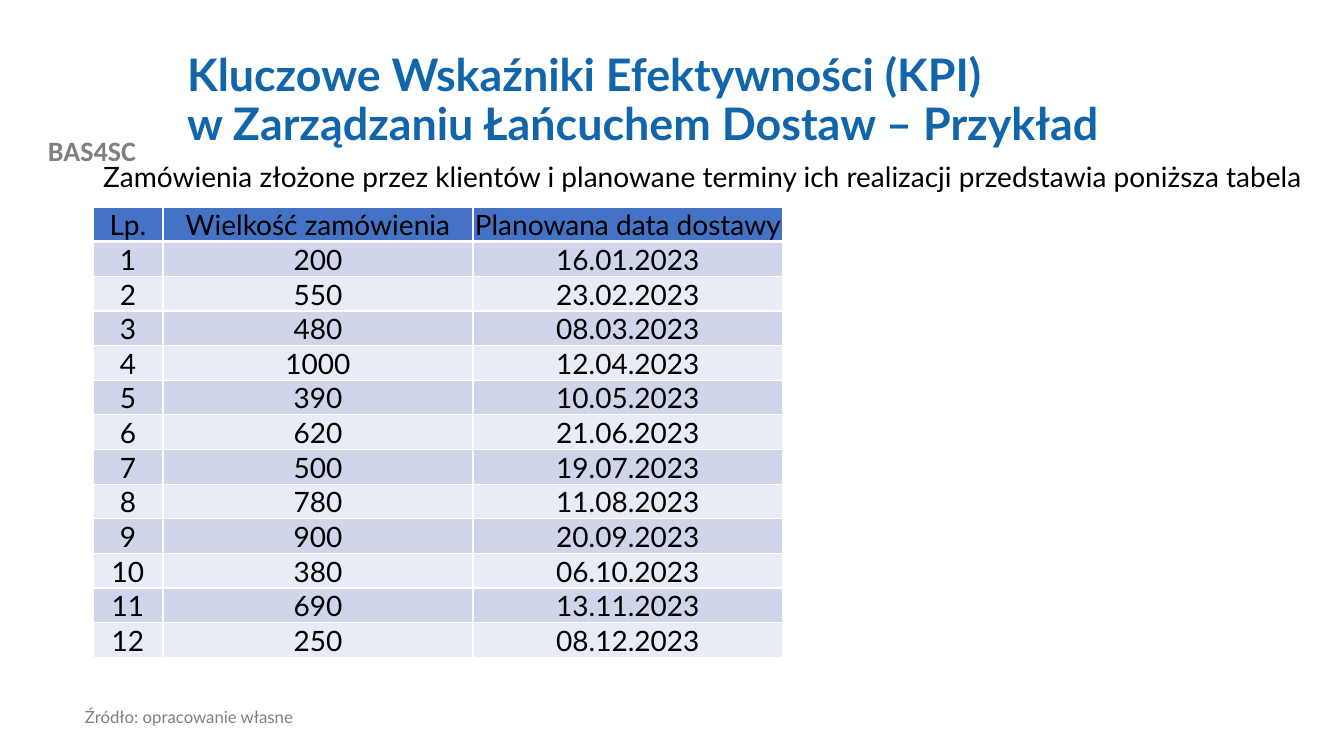
import pptx
import pptx.dml.color
import pptx.enum.text
import pptx.oxml
import pptx.oxml.ns
import pptx.util

PX = 914400 / 100.8
ALIGN = pptx.enum.text.PP_ALIGN
ANCHOR = pptx.enum.text.MSO_ANCHOR

HEADERS = ["Lp.", "Wielkość zamówienia", "Planowana data dostawy"]
ORDERS = [
    (200, "16.01.2023"),
    (550, "23.02.2023"),
    (480, "08.03.2023"),
    (1000, "12.04.2023"),
    (390, "10.05.2023"),
    (620, "21.06.2023"),
    (500, "19.07.2023"),
    (780, "11.08.2023"),
    (900, "20.09.2023"),
    (380, "06.10.2023"),
    (690, "13.11.2023"),
    (250, "08.12.2023"),
]
COLUMN_WIDTHS = [70, 310, 310]
ROW_HEIGHT = 34


def px(n):
    return pptx.util.Emu(round(n * PX))


def rgb(value):
    return pptx.dml.color.RGBColor.from_string(value)


def write(tf, text, size=20, color="000000", font="Lato", bold=False,
          align=ALIGN.LEFT, spacing=1.0, anchor=ANCHOR.TOP):
    tf.word_wrap = True
    tf.vertical_anchor = anchor
    p = tf.paragraphs[0]
    p.text = text
    p.alignment = align
    p.line_spacing = spacing
    p.space_before = pptx.util.Pt(0)
    for r in p.runs:
        r.font.size = pptx.util.Pt(size)
        r.font.name = font
        r.font.bold = bold
        r.font.color.rgb = rgb(color)


def place(sp, x, y, w, h):
    sp.left, sp.top, sp.width, sp.height = px(x), px(y), px(w), px(h)


def fill_placeholder(sp, box, text, **fmt):
    place(sp, *box)
    sp.text_frame.auto_size = pptx.enum.text.MSO_AUTO_SIZE.NONE
    write(sp.text_frame, text, **fmt)


def add_label(slide, box, text, **fmt):
    sp = slide.shapes.add_textbox(*map(px, box))
    write(sp.text_frame, text, **fmt)


def remove_bullet(p):
    pPr = p._p.get_or_add_pPr()
    pPr.set("marL", "0")
    pPr.set("indent", "0")
    pPr.append(pptx.oxml.parse_xml(
        f"<a:buNone {pptx.oxml.ns.nsdecls('a')}/>"))


def set_borders(cell, **widths):
    """Draw white cell borders; widths are in points, keyed by side L, R, T, B."""
    tcPr = cell._tc.get_or_add_tcPr()
    for side, width in widths.items():
        tcPr.append(pptx.oxml.parse_xml(
            f'<a:ln{side} {pptx.oxml.ns.nsdecls("a")} w="{pptx.util.Pt(width)}">'
            '<a:solidFill><a:srgbClr val="FFFFFF"/></a:solidFill>'
            f'</a:ln{side}>'))


def row_color(row):
    if row == 0:
        return "4472C4"
    return "CFD5EA" if row % 2 else "E9EBF5"


def add_orders_table(slide, x, y):
    rows = [HEADERS] + [(n, *order) for n, order in enumerate(ORDERS, 1)]
    frame = slide.shapes.add_table(
        len(rows), len(HEADERS), px(x), px(y),
        px(sum(COLUMN_WIDTHS)), px(ROW_HEIGHT * len(rows)))
    table = frame.table
    for column, width in zip(table.columns, COLUMN_WIDTHS):
        column.width = px(width)
    for i, values in enumerate(rows):
        table.rows[i].height = px(ROW_HEIGHT)
        for j, value in enumerate(values):
            cell = table.cell(i, j)
            cell.margin_left = cell.margin_top = cell.margin_right = px(1)
            cell.margin_bottom = 0
            set_borders(cell, L=1, R=1, T=3 if i == 1 else 1, B=3 if i == 0 else 1)
            cell.fill.solid()
            cell.fill.fore_color.rgb = rgb(row_color(i))
            write(cell.text_frame, str(value), align=ALIGN.CENTER)
            cell.vertical_anchor = ANCHOR.MIDDLE


def main():
    prs = pptx.Presentation()
    prs.slide_width, prs.slide_height = px(1344), px(756)
    slide = prs.slides.add_slide(prs.slide_layouts[1])
    title, body = slide.placeholders

    add_label(slide, (0, 129, 184, 44), "BAS4SC", color="808080",
              font="Calibri", bold=True, align=ALIGN.CENTER)
    fill_placeholder(
        title, (177, 40, 1075, 123),
        "Kluczowe Wskaźniki Efektywności (KPI)\v"
        "w Zarządzaniu Łańcuchem Dostaw – Przykład",
        size=32, color="1065AB", bold=True, spacing=0.9, anchor=ANCHOR.MIDDLE)
    remove_bullet(body.text_frame.paragraphs[0])
    fill_placeholder(
        body, (93, 158, 1251, 115),
        "Zamówienia złożone przez klientów i planowane terminy ich realizacji "
        "przedstawia poniższa tabela",
        align=ALIGN.JUSTIFY, spacing=0.9)
    add_label(slide, (75, 704, 505, 52), "Źródło: opracowanie własne",
              size=12, color="7F7F7F", spacing=0.9)
    add_orders_table(slide, 93, 207)
    prs.save("out.pptx")


if __name__ == "__main__":
    main()
